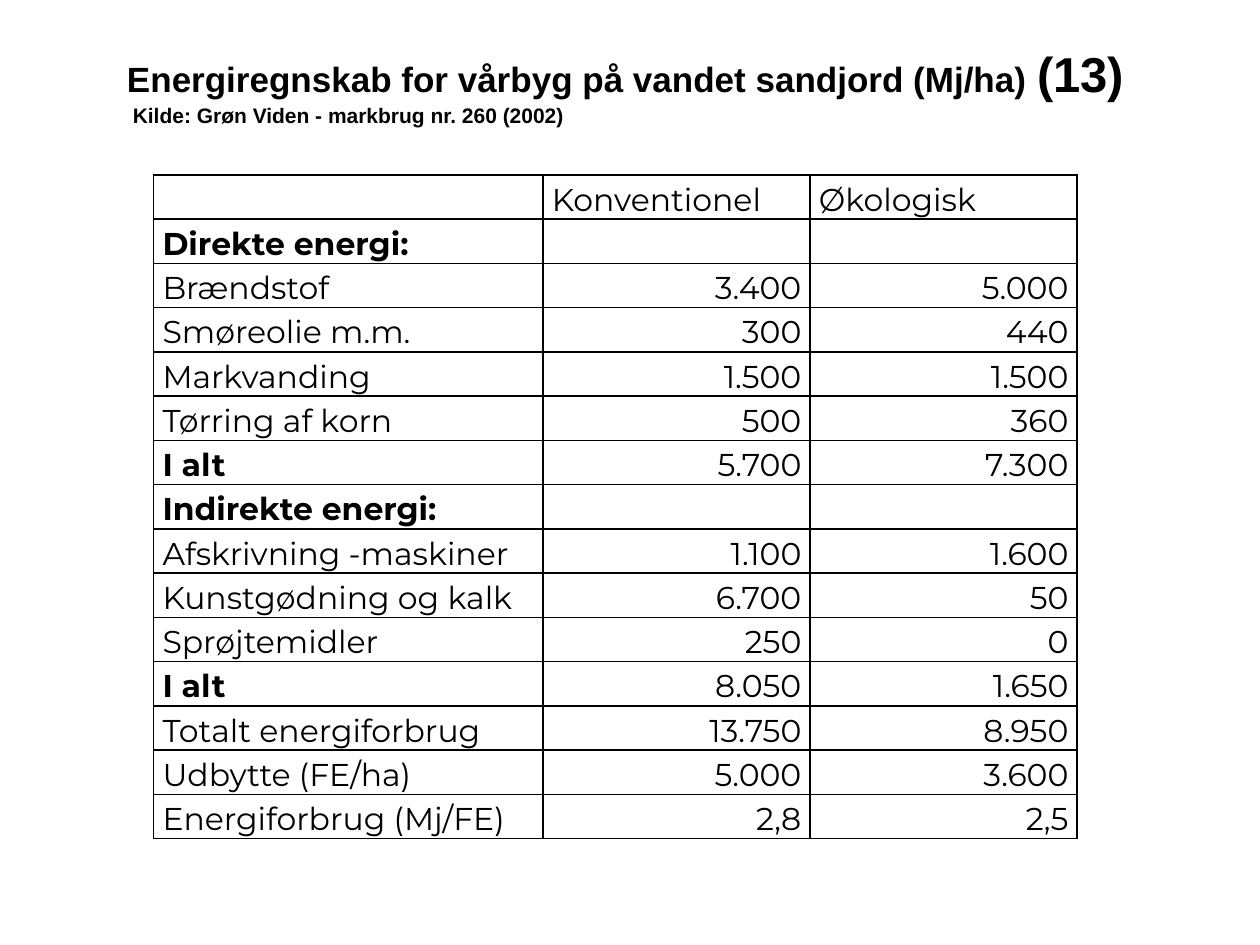
from dataclasses import dataclass

from lxml.etree import SubElement
from pptx import Presentation
from pptx.dml.color import RGBColor
from pptx.enum.text import MSO_ANCHOR, MSO_AUTO_SIZE, PP_ALIGN
from pptx.oxml.ns import qn
from pptx.util import Inches, Pt

W, H = Inches(10), Inches(7.5)
BLACK = "000000"
COLUMN_SHARES = (0.309, 0.212, 0.212)
ROW_SHARE = 0.044


@dataclass
class Row:
    label: str
    conventional: str = ""
    organic: str = ""
    bold: bool = False


HEADER = Row("", "Konventionel", "Økologisk")
ROWS = [
    HEADER,
    Row("Direkte energi:", bold=True),
    Row("Brændstof", "3.400", "5.000"),
    Row("Smøreolie m.m.", "300", "440"),
    Row("Markvanding", "1.500", "1.500"),
    Row("Tørring af korn", "500", "360"),
    Row("I alt", "5.700", "7.300", bold=True),
    Row("Indirekte energi:", bold=True),
    Row("Afskrivning -maskiner", "1.100", "1.600"),
    Row("Kunstgødning og kalk", "6.700", "50"),
    Row("Sprøjtemidler", "250", "0"),
    Row("I alt", "8.050", "1.650", bold=True),
    Row("Totalt energiforbrug", "13.750", "8.950"),
    Row("Udbytte (FE/ha)", "5.000", "3.600"),
    Row("Energiforbrug (Mj/FE)", "2,8", "2,5"),
]


def set_font(font, name: str, size: int, bold: bool, color: str = BLACK) -> None:
    font.name, font.size, font.bold = name, Pt(size), bold
    font.color.rgb = RGBColor.from_string(color)


def add_borders(cell, color: str = BLACK, width: float = 1) -> None:
    tcPr = cell._tc.get_or_add_tcPr()
    for i, side in enumerate(("lnL", "lnR", "lnT", "lnB")):
        ln = SubElement(tcPr, qn(f"a:{side}"), w=str(Pt(width)))
        tcPr.insert(i, ln)
        fill = SubElement(ln, qn("a:solidFill"))
        SubElement(fill, qn("a:srgbClr"), val=color)


def fill_cell(cell, text: str, align: PP_ALIGN, bold: bool) -> None:
    cell.margin_left = cell.margin_right = Inches(0.07)
    cell.margin_top = cell.margin_bottom = 0
    cell.fill.background()
    add_borders(cell)
    p = cell.text_frame.paragraphs[0]
    p.text = text
    p.alignment, p.line_spacing = align, 1.15
    set_font(p.font, "Montserrat", 18, bold)
    for r in p.runs:
        set_font(r.font, "Montserrat", 18, bold)


def add_energy_table(s, rows: list[Row]) -> None:
    table = s.shapes.add_table(
        len(rows), len(COLUMN_SHARES), int(W * 0.122), int(H * 0.185),
        int(W * sum(COLUMN_SHARES)), int(H * ROW_SHARE * len(rows))).table
    table.first_row = table.horz_banding = False
    for column, share in zip(table.columns, COLUMN_SHARES):
        column.width = int(W * share)
    for i, row in enumerate(rows):
        table.rows[i].height = int(H * ROW_SHARE)
        for j, text in enumerate((row.label, row.conventional, row.organic)):
            is_value = j > 0 and row is not HEADER
            align = PP_ALIGN.RIGHT if is_value else PP_ALIGN.JUSTIFY
            fill_cell(table.cell(i, j), text, align, row.bold and j == 0)


def add_title(s, lines: list[list[tuple[str, int]]]) -> None:
    sp = s.shapes.add_textbox(int(W * 0.091), int(H * 0.039),
                              int(W * 0.866), int(H * 0.103))
    tf = sp.text_frame
    tf.word_wrap = True
    tf.auto_size = MSO_AUTO_SIZE.SHAPE_TO_FIT_TEXT
    tf.vertical_anchor = MSO_ANCHOR.MIDDLE
    for i, line in enumerate(lines):
        p = tf.add_paragraph() if i else tf.paragraphs[0]
        p.alignment = PP_ALIGN.JUSTIFY
        for text, size in line:
            r = p.add_run()
            r.text = text
            set_font(r.font, "Arial", size, True)


def main() -> None:
    prs = Presentation()
    prs.slide_width, prs.slide_height = W, H
    s = prs.slides.add_slide(prs.slide_layouts[6])
    add_energy_table(s, ROWS)
    add_title(s, [
        [("Energiregnskab for vårbyg på vandet sandjord (Mj/ha) ", 20), ("(13)", 28)],
        [(" Kilde: Grøn Viden - markbrug nr. 260 (2002)", 12)],
    ])
    prs.save("out.pptx")


if __name__ == "__main__":
    main()
